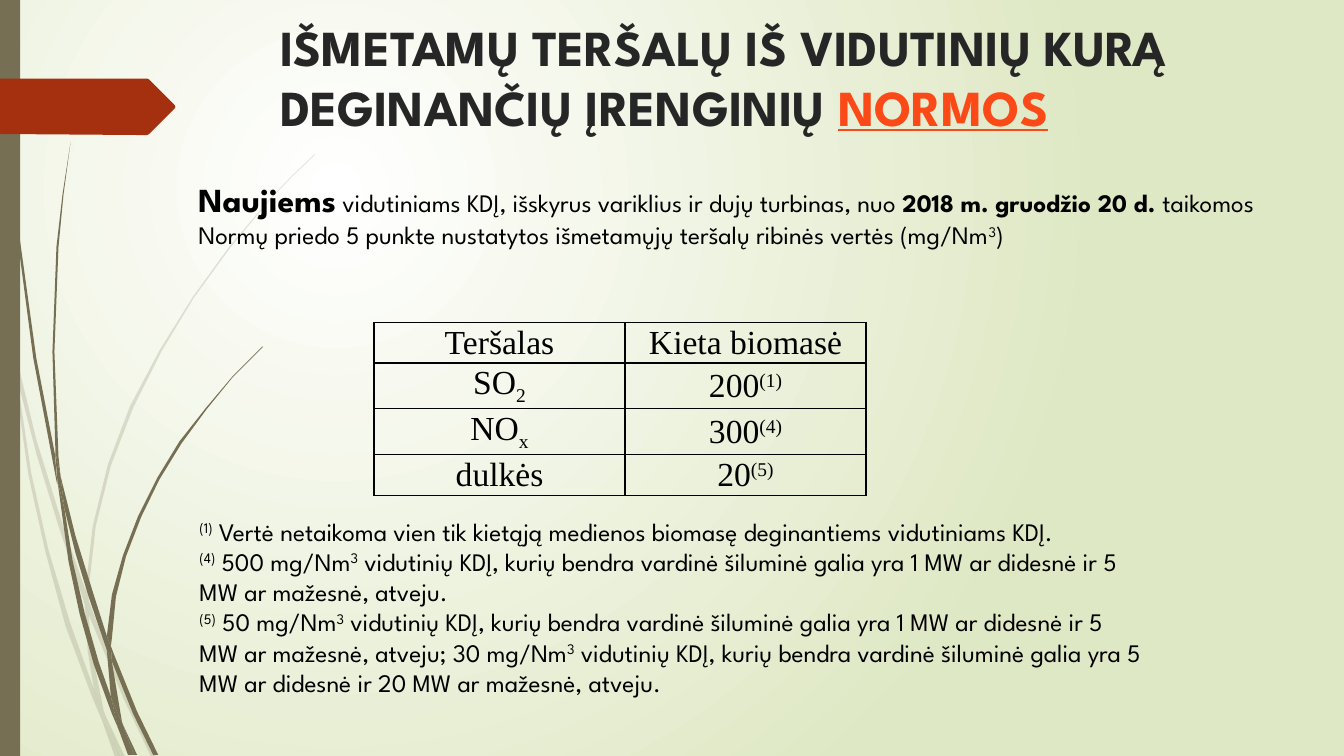
import pptx
import pptx.util
import pptx.dml.color
import pptx.enum.shapes
import pptx.enum.text
import pptx.oxml
import pptx.oxml.ns
from pptx.util import Inches

# ---- Content: runs are (text, style names) ----
TITLE = [("IŠMETAMŲ TERŠALŲ IŠ VIDUTINIŲ KURĄ DEGINANČIŲ ĮRENGINIŲ ", "title bold"),
         ("NORMOS", "title bold accent")]
INTRO = [[("Naujiems", "lead bold"),
          (" vidutiniams KDĮ, išskyrus variklius ir dujų turbinas, nuo ", "body"),
          ("2018 m. gruodžio 20 d. ", "body bold"),
          ("taikomos Normų priedo 5 punkte nustatytos išmetamųjų teršalų "
           "ribinės vertės (mg/Nm", "body"), ("3", "body sup"), (")", "body")]]
TABLE = [
    [[("Teršalas", "cell")], [("Kieta biomasė", "cell")]],
    [[("SO", "cell"), ("2", "cell sub")], [("200", "cell"), ("(1)", "cell sup")]],
    [[("NO", "cell"), ("x", "cell sub")], [("300", "cell"), ("(4)", "cell sup")]],
    [[("dulkės", "cell")], [("20", "cell"), ("(5)", "cell sup")]],
]
NOTES = [
    [("(1)", "body sup"),
     (" Vertė netaikoma vien tik kietąją medienos biomasę deginantiems vidutiniams KDĮ.", "body")],
    [("(4)", "body sup"), (" 500 mg/Nm", "body"), ("3", "body sup"),
     (" vidutinių KDĮ, kurių bendra vardinė šiluminė galia yra 1 MW ar didesnė "
      "ir 5 MW ar mažesnė, atveju.", "body")],
    [("(5)", "body sup"), (" 50 mg/Nm", "body"), ("3", "body sup"),
     (" vidutinių KDĮ, kurių bendra vardinė šiluminė galia yra 1 MW ar didesnė "
      "ir 5 MW ar mažesnė, atveju; 30 mg/Nm", "body"), ("3", "body sup"),
     (" vidutinių KDĮ, kurių bendra vardinė šiluminė galia yra 5 MW ar didesnė "
      "ir 20 MW ar mažesnė, atveju.", "body")],
]
COL_WIDTHS = [2.49, 2.39]
ROW_HEIGHTS = [0.4, 0.45, 0.45, 0.4]

# Grass: outline corners of each leaf section
PALE_GRASS = [
    [(0.11, 3.5), (0.09, 3.22), (0, 2.82), (0, 2.99), (0.1, 3.44)],
    [(0.58, 5.22), (0.84, 5.99), (0.85, 5.86), (0.62, 5.2), (0.36, 4.36), (0.14, 3.45),
     (0.17, 3.76), (0.36, 4.5)],
    [(0.92, 6.07), (0.88, 5.96), (0.88, 6.1), (1.23, 6.94), (1.5, 7.51), (1.55, 7.51),
     (1.27, 6.92)],
    [(1.19, 7.51), (1.24, 7.51), (1.05, 7.11)],
    [(0.93, 6.83), (0.7, 6.19), (0.48, 5.45), (0.31, 4.69), (0.17, 3.76), (0.11, 3.5),
     (0.28, 4.7), (0.45, 5.47), (0.65, 6.21), (0.92, 6.93), (1.01, 7.14), (0.99, 7.07)],
    [(0.84, 5.99), (0.87, 6.46), (0.93, 6.83), (0.96, 6.92), (1.05, 7.11), (1.03, 7.06),
     (0.91, 6.46), (0.88, 6.1), (0.88, 6.08)],
    [(0.88, 5.84), (0.95, 5.22), (1.1, 4.62), (1.32, 4.05), (1.6, 3.49), (1.92, 2.96),
     (2.29, 2.45), (2.68, 1.98), (2.9, 1.75), (3.12, 1.54), (3.12, 1.53), (2.89, 1.75),
     (2.68, 1.97), (2.28, 2.44), (1.91, 2.95), (1.58, 3.48), (1.29, 4.03), (1.07, 4.61),
     (0.92, 5.22), (0.85, 5.84), (0.85, 5.86), (0.88, 5.96)],
    [(1.01, 7.14), (1.14, 7.51), (1.19, 7.51)],
    [(0.88, 6.08), (0.88, 6.1), (0.88, 5.96), (0.85, 5.86), (0.84, 5.99)],
    [(0.96, 6.92), (0.93, 6.83), (0.99, 7.07), (1.01, 7.14), (1.19, 7.51), (1.05, 7.11)],
]
DARK_GRASS = [
    [(0.07, 1.1), (0.17, 2.33), (0.33, 3.55), (0.56, 4.77), (0.57, 4.81), (0.55, 4.57),
     (0.55, 4.53), (0.36, 3.55), (0.19, 2.32), (0.08, 1.09), (0.05, 0.48), (0.04, 0),
     (0.03, 0), (0.04, 0.48)],
    [(0.88, 5.92), (1.06, 6.45), (1.06, 6.31), (0.93, 5.9), (0.75, 5.32), (0.6, 4.72),
     (0.64, 5.05), (0.75, 5.49)],
    [(1.13, 6.49), (1.1, 6.41), (1.11, 6.56), (1.32, 7.08), (1.52, 7.49), (1.57, 7.49),
     (1.36, 7.06)],
    [(1.1, 6.91), (0.98, 6.57), (0.84, 6.08), (0.72, 5.56), (0.64, 5.05), (0.57, 4.77),
     (0.68, 5.57), (0.79, 6.09), (0.93, 6.59), (1.11, 7.08), (1.17, 7.22), (1.16, 7.17)],
    [(0.6, 4.72), (0.58, 4.53), (0.54, 3.49), (0.58, 2.45), (0.63, 1.93), (0.7, 1.41),
     (0.62, 1.93), (0.56, 2.45), (0.52, 3.49), (0.55, 4.49)],
    [(1.33, 7.49), (1.36, 7.49), (1.22, 7.19)],
    [(0.57, 4.77), (0.64, 5.05), (0.6, 4.72), (0.55, 4.49), (0.55, 4.53)],
    [(1.11, 6.33), (1.15, 5.92), (1.25, 5.52), (1.4, 5.13), (1.58, 4.76), (1.8, 4.4),
     (2.05, 4.06), (2.31, 3.74), (2.61, 3.44), (2.6, 3.44), (2.31, 3.73), (2.04, 4.05),
     (1.78, 4.38), (1.56, 4.74), (1.37, 5.12), (1.22, 5.51), (1.11, 5.9), (1.06, 6.31),
     (1.1, 6.41)],
    [(1.17, 7.22), (1.27, 7.49), (1.31, 7.49)],
    [(1.06, 6.45), (1.1, 6.91), (1.16, 7.06), (1.22, 7.19), (1.21, 7.16), (1.11, 6.56)],
    [(1.06, 6.45), (1.11, 6.56), (1.1, 6.41), (1.06, 6.31)],
    [(1.16, 7.06), (1.1, 6.91), (1.17, 7.22), (1.3, 7.49), (1.33, 7.49), (1.22, 7.19)],
]
PENTAGON = [(0, 0.78), (1.46, 0.78), (1.48, 0.79), (1.73, 1.04), (1.74, 1.06),
            (1.73, 1.08), (1.48, 1.33), (1.46, 1.34), (1.36, 1.34), (0, 1.33)]

# ---- Theme ----
THEME = {
    "olive": "766F54", "rust": "A53010", "accent": "FB4A18", "black": "000000",
    "bg": ["FFFFFF", "DFE8C4"],
    # size, font, colour
    "title": (36, "League Spartan", "262626"),
    "lead": (24, "League Spartan", "000000"),
    "body": (18, "League Spartan", "000000"),
    "cell": (24, "Times New Roman", "000000"),
}
SLIDE_W, SLIDE_H = 13.33, 7.5
NS = pptx.oxml.ns.nsdecls("a")


def rgb(value):
    return pptx.dml.color.RGBColor.from_string(value)


def add_runs(p, runs):
    for text, style in runs:
        base, *extras = style.split()
        size, font, colour = THEME[base]
        r = p.add_run()
        r.text = text
        r.font.size, r.font.name = pptx.util.Pt(size), font
        r.font.bold = "bold" in extras
        r.font.color.rgb = rgb(THEME["accent"] if "accent" in extras else colour)
        if "accent" in extras:
            r.font.underline = True
        for name, shift in (("sup", "30000"), ("sub", "-25000")):
            if name in extras:
                r.font._element.set("baseline", shift)


def add_text(s, box, paragraphs):
    tf = s.shapes.add_textbox(*map(Inches, box)).text_frame
    tf.word_wrap = True
    for i, runs in enumerate(paragraphs):
        add_runs(tf.paragraphs[0] if i == 0 else tf.add_paragraph(), runs)


def paint(sp, colour, alpha=None):
    sp.shadow.inherit = False
    sp.fill.solid()
    sp.fill.fore_color.rgb = rgb(colour)
    sp.line.fill.background()
    if alpha:
        clr = sp._element.spPr.find(".//" + pptx.oxml.ns.qn("a:srgbClr"))
        clr.append(pptx.oxml.parse_xml(f'<a:alpha {NS} val="{alpha * 1000}"/>'))


def add_outline(s, points, colour, alpha=None):
    start, *rest = [(Inches(x), Inches(y)) for x, y in points]
    fb = s.shapes.build_freeform(*start)
    fb.add_line_segments(rest, close=True)
    paint(fb.convert_to_shape(), colour, alpha)


def set_cell(cell, runs):
    cell.margin_left = cell.margin_right = Inches(0.07)
    cell.margin_top = cell.margin_bottom = 0
    cell.vertical_anchor = pptx.enum.text.MSO_ANCHOR.MIDDLE
    p = cell.text_frame.paragraphs[0]
    p.alignment = pptx.enum.text.PP_ALIGN.CENTER
    add_runs(p, runs)
    cell.fill.background()
    tc_pr = cell._tc.get_or_add_tcPr()
    for i, side in enumerate(("lnL", "lnR", "lnT", "lnB")):
        tc_pr.insert(i, pptx.oxml.parse_xml(
            f'<a:{side} {NS} w="12700"><a:solidFill><a:srgbClr val="{THEME["black"]}"/>'
            f'</a:solidFill></a:{side}>'))


def main():
    prs = pptx.Presentation()
    prs.slide_width, prs.slide_height = Inches(SLIDE_W), Inches(SLIDE_H)
    s = prs.slides.add_slide(prs.slide_layouts[6])

    # Background glow
    fill = s.background.fill
    fill.gradient()
    for stop, colour in zip(fill.gradient_stops, THEME["bg"]):
        stop.color.rgb = rgb(colour)
    lin = s.element.find(".//" + pptx.oxml.ns.qn("a:lin"))
    lin.getparent().replace(lin, pptx.oxml.parse_xml(
        f'<a:path {NS} path="circle"><a:fillToRect l="50000" t="50000" '
        'r="100000" b="100000"/></a:path>'))

    # Grass, side bar and pentagon tab
    for grass, alpha in ((PALE_GRASS, 20), (DARK_GRASS, None)):
        for leaf in grass:
            add_outline(s, leaf, THEME["olive"], alpha)
    bar = s.shapes.add_shape(pptx.enum.shapes.MSO_SHAPE.RECTANGLE,
                             0, 0, Inches(0.2), Inches(SLIDE_H))
    paint(bar, THEME["olive"])
    add_outline(s, PENTAGON, THEME["rust"])

    # Title and introduction
    add_text(s, (2.68, 0.11, 9.75, 1.4), [TITLE])
    add_text(s, (1.87, 1.73, 11.22, 0.81), INTRO)

    # Limit values
    table = s.shapes.add_table(len(TABLE), len(COL_WIDTHS), Inches(3.71), Inches(3.2),
                               Inches(sum(COL_WIDTHS)), Inches(sum(ROW_HEIGHTS))).table
    table.first_row = table.horz_banding = False
    for col, width in zip(table.columns, COL_WIDTHS):
        col.width = Inches(width)
    for row, height, cells in zip(table.rows, ROW_HEIGHTS, TABLE):
        row.height = Inches(height)
        for cell, runs in zip(row.cells, cells):
            set_cell(cell, runs)

    # Footnotes
    add_text(s, (1.88, 5.07, 9.58, 2.22), NOTES)
    prs.save("out.pptx")


if __name__ == "__main__":
    main()
